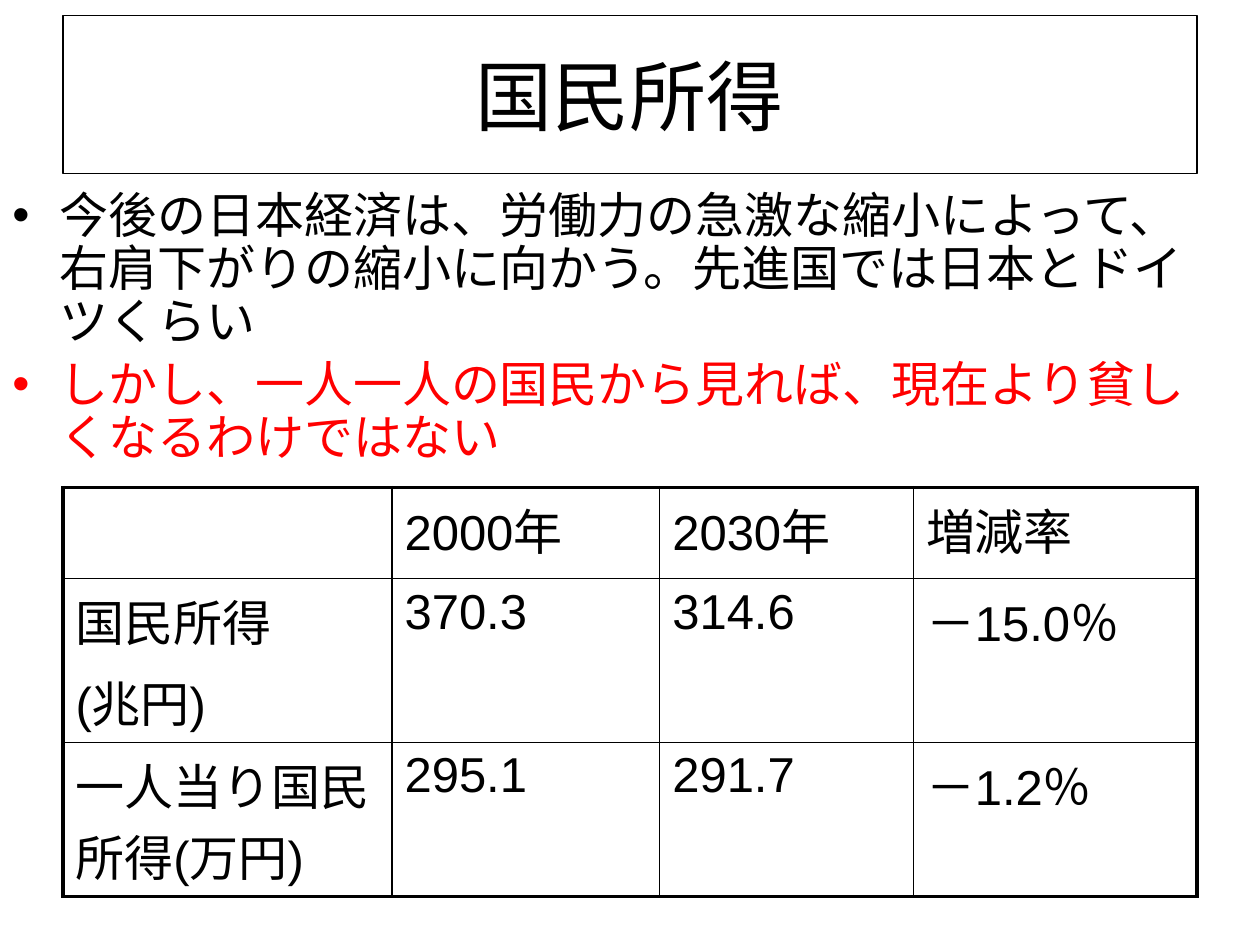
from lxml import etree
from pptx import Presentation
from pptx.dml.color import RGBColor
from pptx.enum.shapes import MSO_SHAPE
from pptx.enum.text import MSO_ANCHOR, PP_ALIGN
from pptx.oxml.ns import qn
from pptx.util import Pt

RECT = MSO_SHAPE.RECTANGLE
MID = MSO_ANCHOR.MIDDLE
TOP = MSO_ANCHOR.TOP
LEFT = PP_ALIGN.LEFT
CENTER = PP_ALIGN.CENTER
BLACK, RED = "000000", "FF0000"
THIN, THICK = 1, 2.25

POINTS = [
    ("今後の日本経済は、労働力の急激な縮小によって、右肩下がりの縮小に向かう。先進国では日本とドイツくらい", BLACK),
    ("しかし、一人一人の国民から見れば、現在より貧しくなるわけではない", RED),
]
ROWS = [
    ["", "2000年", "2030年", "増減率"],
    ["国民所得\n(兆円)", "370.3", "314.6", "－15.0％"],
    ["一人当り国民所得(万円)", "295.1", "291.7", "－1.2％"],
]
WIDTHS = [188, 153, 145, 162]
HEIGHTS = [52, 93.6, 88]


def color(code):
    return RGBColor.from_string(code)


def node(parent, tag, **attrs):
    return etree.SubElement(parent, qn(tag), attrs)


def write(para, text, size=28, font="Arial", ink=BLACK, align=LEFT,
          gap=None, line=None, bullet=None):
    para.alignment = align
    if line:
        para.line_spacing = line
    props = para._p.get_or_add_pPr()
    if gap:
        node(node(props, "a:spcBef"), "a:spcPct", val=str(gap * 1000))
    if bullet:
        props.set("marL", str(Pt(27)))
        props.set("indent", str(-Pt(27)))
        node(props, "a:buFont", typeface="Arial")
        node(props, "a:buChar", char=bullet)
    style = para.font
    if text:
        run = para.add_run()
        run.text = text
        style = run.font
    style.size = Pt(size)
    style.name = font
    style.color.rgb = color(ink)


def border(cell, widths):
    props = cell._tc.get_or_add_tcPr()
    for spot, (side, width) in enumerate(widths.items()):
        line = etree.Element(qn(f"a:ln{side}"), w=str(Pt(width)))
        node(node(line, "a:solidFill"), "a:srgbClr", val=BLACK)
        props.insert(spot, line)


class Deck:
    """Hold the shared style and the current slide."""

    def __init__(self, font="Calibri"):
        self.font = font
        self.file = Presentation()
        self.file.slide_width, self.file.slide_height = Pt(720), Pt(540)
        self.slide = self.file.slides.add_slide(self.file.slide_layouts[6])

    def title(self, text, *area):
        shape = self.slide.shapes.add_shape(RECT, *map(Pt, area))
        shape.shadow.inherit = False
        shape.fill.background()
        shape.line.color.rgb = color(BLACK)
        shape.line.width = Pt(0.75)
        frame = shape.text_frame
        frame.word_wrap = True
        frame.vertical_anchor = MID
        write(frame.paragraphs[0], text, size=44, font=self.font, align=CENTER)

    def bullets(self, items, *area):
        frame = self.slide.shapes.add_textbox(*map(Pt, area)).text_frame
        frame.word_wrap = True
        for spot, (text, ink) in enumerate(items):
            para = frame.add_paragraph() if spot else frame.paragraphs[0]
            write(para, text, font=self.font, ink=ink, gap=20, line=0.9, bullet="•")

    def table(self, rows, widths, heights, left, top):
        area = map(Pt, (left, top, sum(widths), sum(heights)))
        grid = self.slide.shapes.add_table(len(rows), len(widths), *area).table
        for col, width in zip(grid.columns, widths):
            col.width = Pt(width)
        for row, height in zip(grid.rows, heights):
            row.height = Pt(height)
        last, end = len(rows) - 1, len(widths) - 1
        for r, row in enumerate(rows):
            for c, text in enumerate(row):
                cell = grid.cell(r, c)
                cell.fill.background()
                cell.vertical_anchor = TOP
                border(cell, {
                    "L": THIN if c else THICK,
                    "R": THICK if c == end else THIN,
                    "T": THIN if r else THICK,
                    "B": THICK if r == last else THIN,
                })
                frame = cell.text_frame
                for spot, part in enumerate(text.split("\n")):
                    para = frame.add_paragraph() if spot else frame.paragraphs[0]
                    write(para, part, gap=20)

    def save(self):
        self.file.save("out.pptx")


def main():
    deck = Deck()
    deck.title("国民所得", 36, 9, 648, 90)
    deck.bullets(POINTS, 0, 105.8, 684, 170)
    deck.table(ROWS, WIDTHS, HEIGHTS, 36, 278.6)
    deck.save()


if __name__ == "__main__":
    main()
